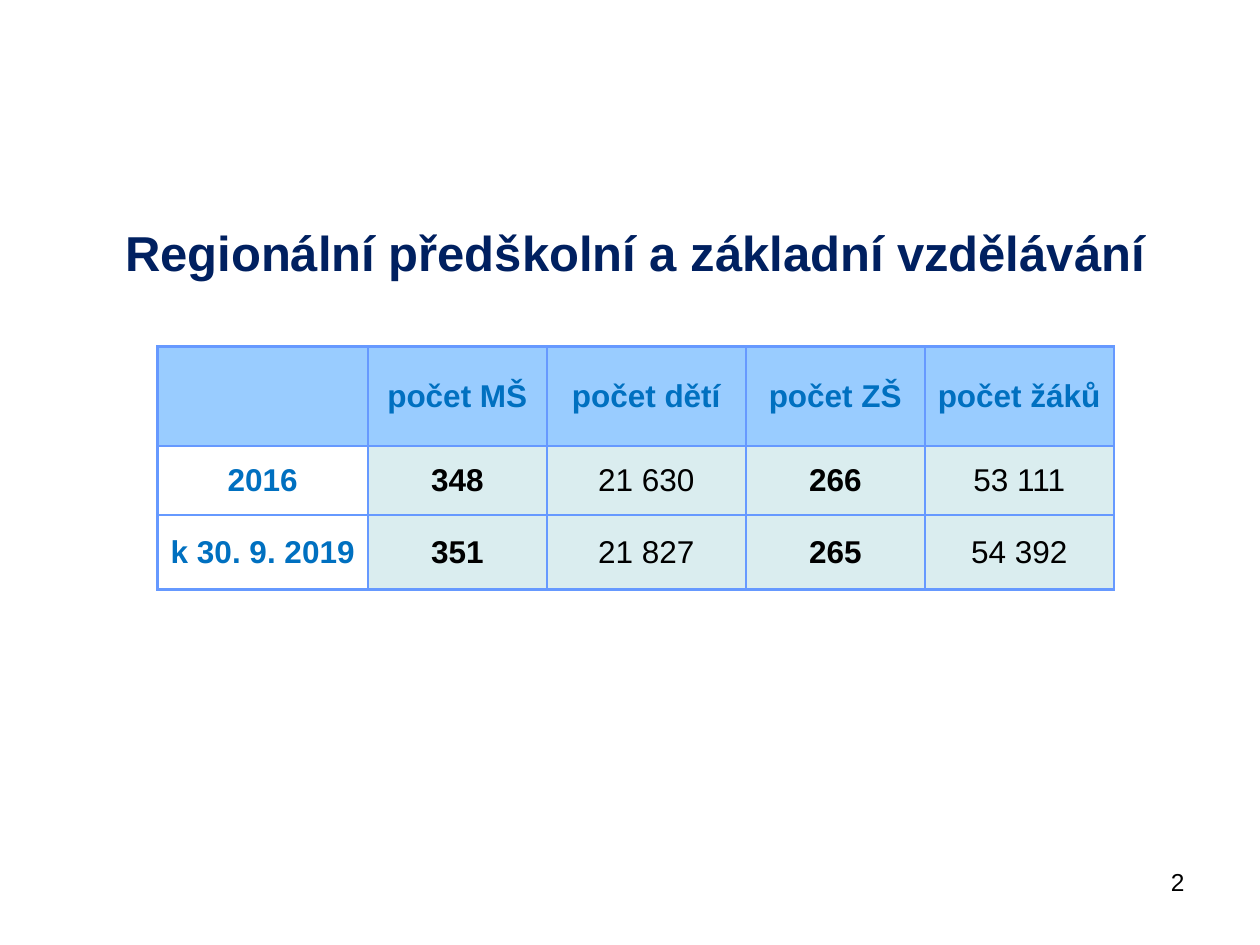
"""Build a slide with a table of regional pre-school and primary education counts."""
from lxml.etree import SubElement
from pptx import Presentation
from pptx.dml.color import RGBColor
from pptx.enum.text import MSO_ANCHOR, PP_ALIGN
from pptx.oxml.ns import qn
from pptx.util import Inches, Pt

TITLE = "Regionální předškolní a základní vzdělávání"
PAGE = "2"
ROWS = [
    ["", "počet MŠ", "počet dětí", "počet ZŠ", "počet žáků"],
    ["2016", "348", "21 630", "266", "53 111"],
    ["k 30. 9. 2019", "351", "21 827", "265", "54 392"],
]
COL_WIDTHS = [1.67, 1.42, 1.58, 1.42, 1.5]
ROW_HEIGHTS = [0.79, 0.55, 0.59]
NAVY, BLUE, BLACK = "002060", "0070C0", "000000"
HEADER_FILL, BODY_FILL, BORDER = "99CCFF", "DAEDEF", "6699FF"


def rgb(value):
    return RGBColor.from_string(value)


def write(tf, text, size, color, bold, align):
    tf.text = text
    p = tf.paragraphs[0]
    p.alignment = align
    for r in p.runs:
        r.font.name = "Arial"
        r.font.size = Pt(size)
        r.font.bold = bold
        r.font.color.rgb = rgb(color)


def add_text(s, box, *style):
    tf = s.shapes.add_textbox(*map(Inches, box)).text_frame
    tf.word_wrap = True
    write(tf, *style)


def add_borders(cell):
    tc_pr = cell._tc.get_or_add_tcPr()
    for side in ("a:lnL", "a:lnR", "a:lnT", "a:lnB"):
        ln = SubElement(tc_pr, qn(side), w=str(Pt(1.5)))
        SubElement(SubElement(ln, qn("a:solidFill")), qn("a:srgbClr"), val=BORDER)


def format_cell(cell, text, row, col):
    label = row == 0 or col == 0
    bold = label or col % 2 == 1
    write(cell.text_frame, text, 18, BLUE if label else BLACK, bold, PP_ALIGN.CENTER)
    cell.vertical_anchor = MSO_ANCHOR.MIDDLE
    cell.margin_left = cell.margin_right = Inches(0.08)
    add_borders(cell)
    if row and col == 0:
        cell.fill.background()
    else:
        cell.fill.solid()
        cell.fill.fore_color.rgb = rgb(BODY_FILL if row else HEADER_FILL)


def add_counts(s, left, top):
    size = (sum(COL_WIDTHS), sum(ROW_HEIGHTS))
    table = s.shapes.add_table(
        len(ROWS), len(COL_WIDTHS), *map(Inches, (left, top, *size))).table
    for column, width in zip(table.columns, COL_WIDTHS):
        column.width = Inches(width)
    for i, (height, texts) in enumerate(zip(ROW_HEIGHTS, ROWS)):
        table.rows[i].height = Inches(height)
        for j, text in enumerate(texts):
            format_cell(table.cell(i, j), text, i, j)


def main():
    prs = Presentation()
    prs.slide_width, prs.slide_height = Inches(10), Inches(7.5)
    s = prs.slides.add_slide(prs.slide_layouts[6])
    add_text(s, (0.75, 1.72, 8.58, 5.37), TITLE, 28, NAVY, True, PP_ALIGN.CENTER)
    add_counts(s, 1.25, 2.75)
    add_text(s, (7.17, 6.83, 2.33, 0.52), PAGE, 14, BLACK, False, PP_ALIGN.RIGHT)
    prs.save("out.pptx")


if __name__ == "__main__":
    main()
